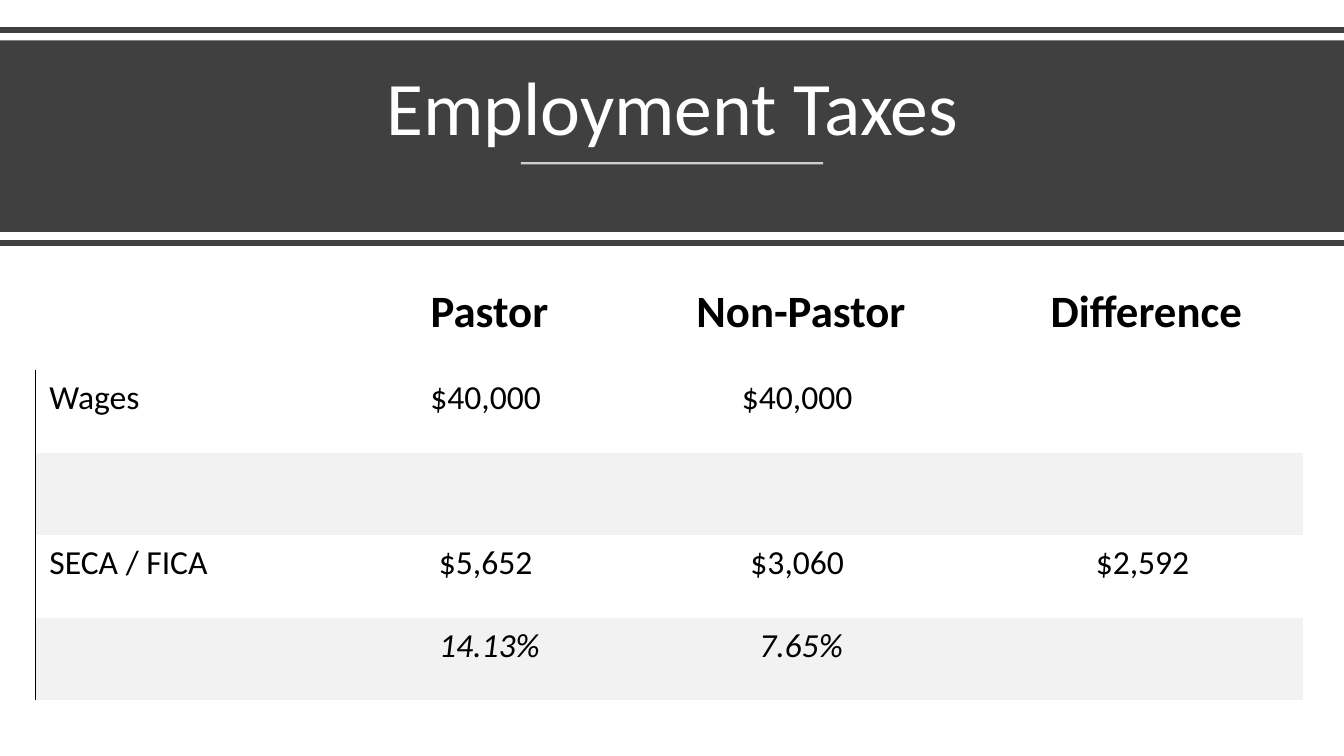
from lxml import etree
from pptx import Presentation
from pptx import util as u
from pptx.dml.color import RGBColor
from pptx.enum import shapes, text
from pptx.oxml import parse_xml
from pptx.oxml.ns import nsdecls, qn

CHARCOAL = RGBColor(0x40, 0x40, 0x40)
WHITE = RGBColor(0xFF, 0xFF, 0xFF)
BLACK = RGBColor(0, 0, 0)
STRIPE = RGBColor(0xF2, 0xF2, 0xF2)
FONT = "Calibri"
NO_STYLE = "{2D5ABB26-0587-4C30-8999-92F81FD0307C}"

presentation = Presentation()
presentation.slide_width = u.Inches(13.33)
presentation.slide_height = u.Inches(7.5)
slide = presentation.slides.add_slide(presentation.slide_layouts[5])
width = presentation.slide_width


def add_rule(left, right, top, color, weight):
    rule = slide.shapes.add_connector(
        shapes.MSO_CONNECTOR.STRAIGHT, left, u.Inches(top), right, u.Inches(top))
    rule.line.color.rgb = color
    rule.line.width = u.Pt(weight)
    etree.SubElement(rule._element.spPr, qn("a:effectLst"))
    return rule


def add_text(paragraph, words, size, color, bold=False, italic=False):
    run = paragraph.add_run()
    run.text = words
    run.font.name = FONT
    run.font.size = u.Pt(size)
    run.font.color.rgb = color
    run.font.bold = bold
    run.font.italic = italic


# Header band between two rules
for top in (0.3, 2.41):
    add_rule(0, width, top, CHARCOAL, 4)
band = slide.shapes.add_shape(
    shapes.MSO_SHAPE.RECTANGLE, 0, u.Inches(0.4), width, u.Inches(1.9))
band.shadow.inherit = False
band.fill.solid()
band.fill.fore_color.rgb = CHARCOAL
band.line.fill.background()

# Title, brought in front of the band
title = slide.shapes.title
title.left, title.top = u.Inches(0.58), u.Inches(0.54)
title.width, title.height = u.Inches(12.18), u.Inches(1.02)
title.text_frame.vertical_anchor = text.MSO_ANCHOR.BOTTOM
title.text_frame.auto_size = text.MSO_AUTO_SIZE.NONE
heading = title.text_frame.paragraphs[0]
heading.alignment = text.PP_ALIGN.CENTER
heading.line_spacing = 0.9
add_text(heading, "Employment Taxes", 54, WHITE)
slide.shapes._spTree.append(title._element)

# Translucent underline, centred on the slide
half = u.Inches(1.5)
underline = add_rule(width // 2 - half, width // 2 + half, 1.62, WHITE, 1.5)
white_fill = underline._element.spPr.find(".//" + qn("a:srgbClr"))
etree.SubElement(white_fill, qn("a:alpha"), val="75000")

# Tax comparison table
rows = [
    ["", "Pastor", "Non-Pastor", "Difference"],
    ["Wages", "$40,000 ", "$40,000 ", ""],
    ["", "", "", ""],
    ["SECA / FICA", "$5,652 ", "$3,060 ", "$2,592 "],
    ["", "14.13%", "7.65%", ""],
]
column_widths = [3.17, 2.55, 3.63, 3.22]
row_heights = [0.95] + [0.82] * 4
frame = slide.shapes.add_table(
    len(rows), len(column_widths), u.Inches(0.35), u.Inches(2.72),
    u.Inches(sum(column_widths)), u.Inches(sum(row_heights)))
table = frame.table
table.first_row = table.horz_banding = False
table._tbl.tblPr.find(qn("a:tableStyleId")).text = NO_STYLE
for column, column_width in zip(table.columns, column_widths):
    column.width = u.Inches(column_width)

for r, row in enumerate(rows):
    table.rows[r].height = u.Inches(row_heights[r])
    is_header, is_percent = r == 0, r == 4
    for c, words in enumerate(row):
        cell = table.cell(r, c)
        cell.margin_left, cell.margin_top = u.Inches(0.14), u.Inches(0.04)
        cell.margin_right, cell.margin_bottom = u.Inches(0.02), u.Inches(0.3)
        cell.vertical_anchor = (
            text.MSO_ANCHOR.BOTTOM if is_header else text.MSO_ANCHOR.MIDDLE)
        if r in (2, 4):
            cell.fill.solid()
            cell.fill.fore_color.rgb = STRIPE
        else:
            cell.fill.background()
        if words:
            paragraph = cell.text_frame.paragraphs[0]
            paragraph.alignment = (
                text.PP_ALIGN.CENTER if c else text.PP_ALIGN.LEFT)
            add_text(paragraph, words, 32 if is_header else 24, BLACK,
                     bold=is_header, italic=is_percent)
        # Thin left border beside the body rows
        if c == 0 and not is_header:
            border = parse_xml(
                f'<a:lnL {nsdecls("a")} w="{u.Pt(0.75)}"><a:solidFill>'
                f'<a:srgbClr val="{BLACK}"/></a:solidFill></a:lnL>')
            cell._tc.get_or_add_tcPr().insert(0, border)

presentation.save("out.pptx")
